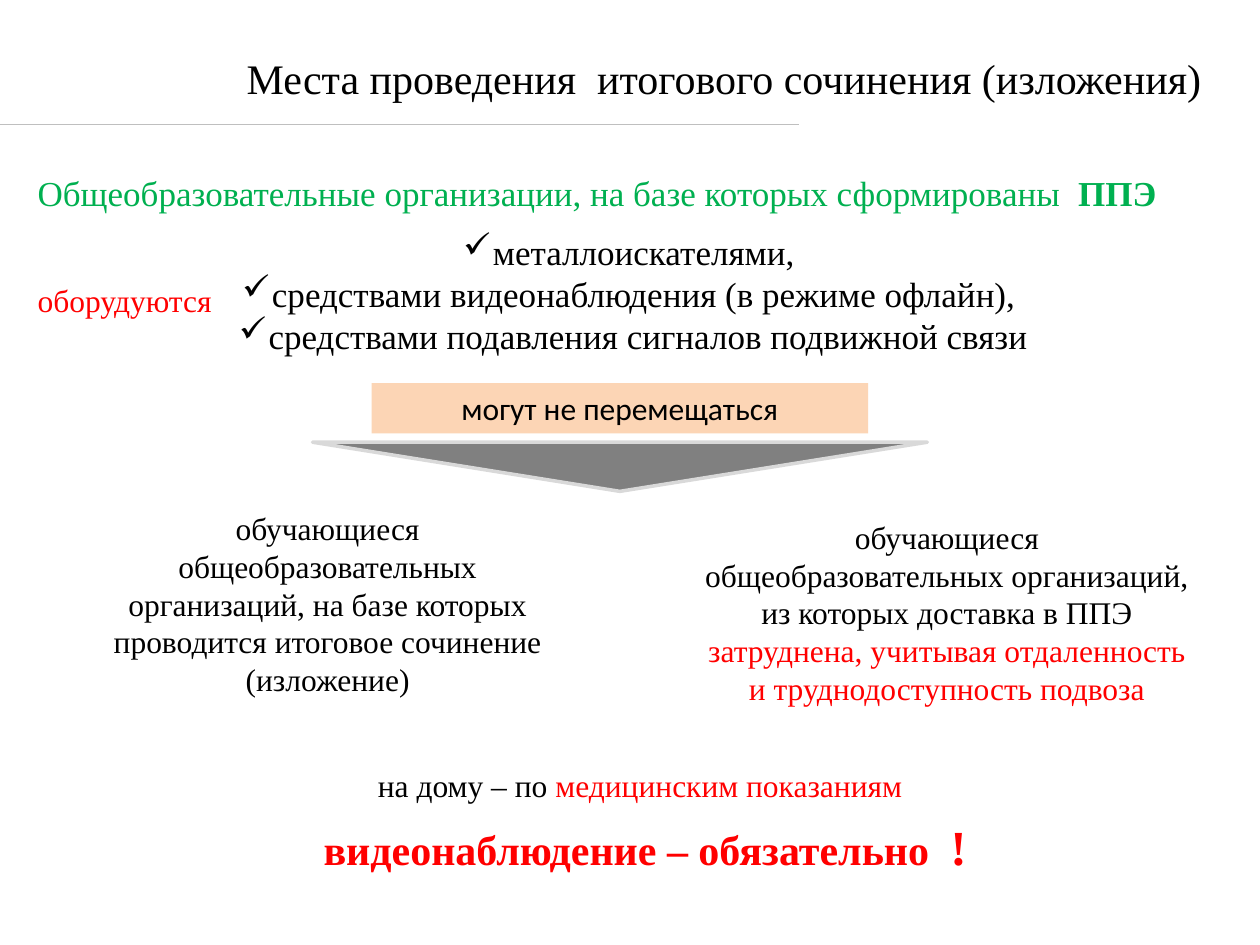
from lxml import etree
from pptx import Presentation
from pptx.dml.color import RGBColor
from pptx.enum import shapes, text
from pptx.oxml.ns import qn
from pptx.util import Inches, Pt

BLACK, RED, GREEN = "000000", "FF0000", "00B050"
SERIF = "Times New Roman"


def rgb(value):
    return RGBColor.from_string(value)


def write(shape, paragraphs, align=text.PP_ALIGN.CENTER, font=SERIF):
    frame = shape.text_frame
    frame.word_wrap = True
    for index, runs in enumerate(paragraphs):
        paragraph = frame.add_paragraph() if index else frame.paragraphs[0]
        paragraph.alignment = align
        for words, size, color, bold in runs:
            run = paragraph.add_run()
            run.text = words
            run.font.name = font
            run.font.size = Pt(size)
            run.font.bold = bold
            run.font.color.rgb = rgb(color)
    return frame


prs = Presentation()
prs.slide_width, prs.slide_height = Inches(10), Inches(7.5)
slide = prs.slides.add_slide(prs.slide_layouts[6])

left, center = text.PP_ALIGN.LEFT, text.PP_ALIGN.CENTER
statements = [
    ((1.86, 0.37, 8.03, 0.5), left,
     [("Места проведения  итогового сочинения (изложения)", 24, BLACK, False)]),
    ((0.2, 1.31, 9.29, 0.44), left,
     [("Общеобразовательные организации, на базе которых сформированы  ", 20, GREEN, False),
      ("ППЭ", 20, GREEN, True)]),
    ((0.2, 2.18, 1.73, 0.4), left, [("оборудуются", 18, RED, False)]),
    ((0.59, 3.99, 4.02, 1.62), center,
     [("обучающиеся общеобразовательных организаций, на базе которых "
       "проводится итоговое сочинение (изложение)", 18, BLACK, False)]),
    ((5.47, 4.06, 4.09, 1.62), center,
     [("обучающиеся общеобразовательных организаций, из которых доставка в ППЭ ",
       18, BLACK, False),
      ("затруднена, учитывая отдаленность и труднодоступность подвоза", 18, RED, False)]),
    ((0.67, 6.03, 8.82, 0.4), center,
     [("на дому – по ", 18, BLACK, False), ("медицинским показаниям", 18, RED, False)]),
    ((2.09, 6.43, 6.06, 0.57), center,
     [("видеонаблюдение – обязательно  ", 24, RED, True), ("!", 28, RED, True)]),
]
for place, align, runs in statements:
    write(slide.shapes.add_textbox(*map(Inches, place)), [runs], align)

equipment = [
    "металлоискателями, ",
    "средствами видеонаблюдения (в режиме офлайн), ",
    "средствами подавления сигналов подвижной связи",
]
equipment_box = slide.shapes.add_textbox(Inches(0.35), Inches(1.78), Inches(9.37), Inches(1.11))
equipment_frame = write(equipment_box, [[(item, 20, BLACK, False)] for item in equipment])
for paragraph in equipment_frame.paragraphs:
    etree.SubElement(paragraph._p.get_or_add_pPr(), qn("a:buChar")).set("char", "✓")

exemption = slide.shapes.add_shape(
    shapes.MSO_SHAPE.RECTANGLE, Inches(2.95), Inches(3.04), Inches(3.94), Inches(0.4))
exemption.shadow.inherit = False
exemption.fill.solid()
exemption.fill.fore_color.rgb = rgb("FCD5B5")
exemption.line.fill.background()
write(exemption, [[("могут не перемещаться", 18, BLACK, False)]], font="Calibri")

pointer = slide.shapes.add_shape(
    shapes.MSO_SHAPE.ISOSCELES_TRIANGLE, Inches(2.48), Inches(3.51), Inches(4.88), Inches(0.39))
pointer.shadow.inherit = False
pointer._element.spPr.xfrm.set("flipV", "1")
pointer.fill.solid()
pointer.fill.fore_color.rgb = rgb("808080")
pointer.line.color.rgb = rgb("D9D9D9")
pointer.line.width = Pt(2)

title_rule = slide.shapes.add_connector(
    shapes.MSO_CONNECTOR.STRAIGHT, Inches(0), Inches(0.99), Inches(6.34), Inches(0.99))
title_rule.line.color.rgb = rgb("BFBFBF")
title_rule.line.width = Pt(0.75)
etree.SubElement(title_rule._element.spPr, qn("a:effectLst"))

prs.save("out.pptx")
